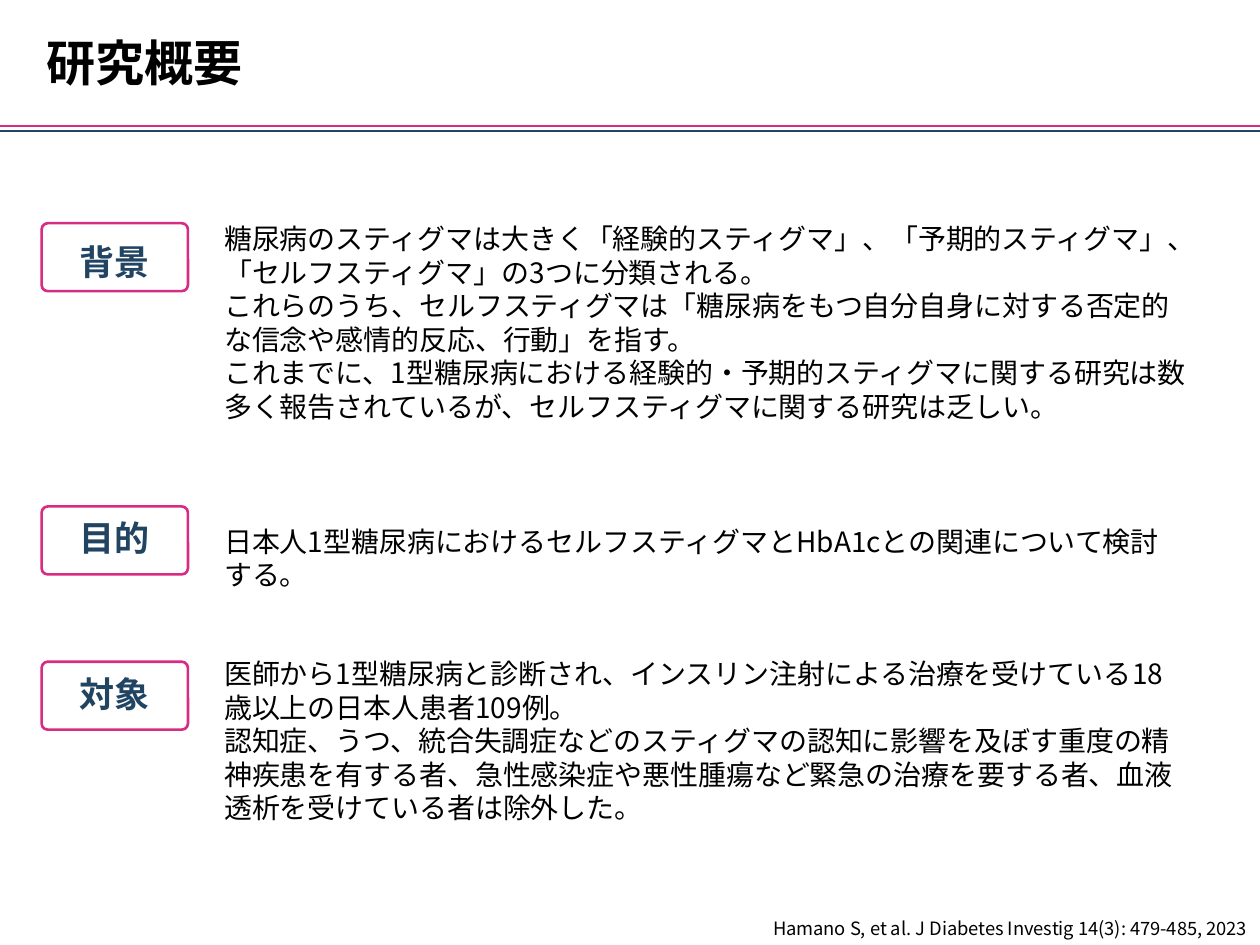
"""Build the study overview slide: title, three labelled sections and a citation."""
from lxml import etree
from pptx import Presentation
from pptx.dml.color import RGBColor
from pptx.enum.lang import MSO_LANGUAGE_ID
from pptx.enum.shapes import MSO_CONNECTOR, MSO_SHAPE
from pptx.enum.text import MSO_ANCHOR, MSO_AUTO_SIZE, PP_ALIGN
from pptx.oxml.ns import qn
from pptx.util import Cm, Pt

JAPANESE = MSO_LANGUAGE_ID.JAPANESE
STRAIGHT, ROUNDED = MSO_CONNECTOR.STRAIGHT, MSO_SHAPE.ROUNDED_RECTANGLE
TOP, MIDDLE, BOTTOM = MSO_ANCHOR.TOP, MSO_ANCHOR.MIDDLE, MSO_ANCHOR.BOTTOM
FIT, FIXED = MSO_AUTO_SIZE.SHAPE_TO_FIT_TEXT, MSO_AUTO_SIZE.NONE
LEFT, CENTER, RIGHT = PP_ALIGN.LEFT, PP_ALIGN.CENTER, PP_ALIGN.RIGHT

TITLE = "研究概要"
CITATION = "Hamano S, et al. J Diabetes Investig 14(3): 479-485, 2023"
SECTIONS = [
    {"label": "背景", "label_top": 4.5, "spacing": 1.2, "body": (4.34, 20.04, 4.37), "text": [
        "糖尿病のスティグマは大きく「経験的スティグマ」、「予期的スティグマ」、「セルフスティグマ」の3つに分類される。",
        "これらのうち、セルフスティグマは「糖尿病をもつ自分自身に対する否定的な信念や感情的反応、行動」を指す。",
        "これまでに、1型糖尿病における経験的・予期的スティグマに関する研究は数多く報告されているが、"
        "セルフスティグマに関する研究は乏しい。"]},
    {"label": "目的", "label_top": 10.21, "spacing": 0.9, "body": (10.44, 19.76, 0.94), "text": [
        "日本人1型糖尿病におけるセルフスティグマとHbA1cとの関連について検討する。"]},
    {"label": "対象", "label_top": 13.34, "spacing": 0.9, "body": (13.11, 19.76, 3.68), "text": [
        "医師から1型糖尿病と診断され、インスリン注射による治療を受けている18歳以上の日本人患者109例。",
        "認知症、うつ、統合失調症などのスティグマの認知に影響を及ぼす重度の精神疾患を有する者、"
        "急性感染症や悪性腫瘍など緊急の治療を要する者、血液透析を受けている者は除外した。"]},
]

FONT = "Noto Sans CJK JP"
COLORS = {"navy": "224463", "pink": "D82B83", "black": "000000"}
SLIDE_W, SLIDE_H = 25.4, 19.05
LABEL_X, LABEL_W, LABEL_H = 0.84, 2.95, 1.37
BODY_X = 4.27
RULES = [(2.64, "navy"), (2.54, "pink")]


def rgb(name):
    return RGBColor.from_string(COLORS[name])


def write(sp, lines, size, color="black", bold=False, align=LEFT, spacing=1.0, **frame):
    tf = sp.text_frame
    for name, value in ({"word_wrap": True, "auto_size": FIXED} | frame).items():
        setattr(tf, name, value)
    for i, line in enumerate(lines):
        p = tf.paragraphs[0] if i == 0 else tf.add_paragraph()
        p.alignment, p.line_spacing = align, spacing
        r = p.add_run()
        r.text = line
        look = {"name": FONT, "size": Pt(size), "bold": bold, "language_id": JAPANESE}
        for name, value in look.items():
            setattr(r.font, name, value)
        r.font.color.rgb = rgb(color)
        r.font._element.find(qn("a:latin")).addnext(
            etree.Element(qn("a:ea"), typeface=FONT))


def add_rule(slide, y, color):
    line = slide.shapes.add_connector(STRAIGHT, 0, Cm(y), Cm(SLIDE_W), Cm(y))
    line.line.color.rgb, line.line.width = rgb(color), Pt(1.5)
    etree.SubElement(line._element.spPr, qn("a:effectLst"))


def add_section(slide, section):
    box = slide.shapes.add_shape(
        ROUNDED, Cm(LABEL_X), Cm(section["label_top"]), Cm(LABEL_W), Cm(LABEL_H))
    box.adjustments[0] = 0.09
    box.shadow.inherit = False
    box.fill.background()
    box.line.color.rgb, box.line.width = rgb("pink"), Pt(1.5)
    write(box, [section["label"]], 20, "navy", True, CENTER, section["spacing"],
          vertical_anchor=MIDDLE)
    top, width, height = section["body"]
    body = slide.shapes.add_textbox(Cm(BODY_X), Cm(top), Cm(width), Cm(height))
    write(body, section["text"], 16, vertical_anchor=TOP, auto_size=FIT)


def main():
    prs = Presentation()
    prs.slide_width, prs.slide_height = Cm(SLIDE_W), Cm(SLIDE_H)
    slide = prs.slides.add_slide(prs.slide_layouts[5])
    for y, color in RULES:
        add_rule(slide, y, color)

    title = slide.shapes.title
    place = {"left": 0.69, "top": 0.53, "width": 4.5, "height": 1.45}
    for name, value in place.items():
        setattr(title, name, Cm(value))
    write(title, [TITLE], 28, bold=True, vertical_anchor=MIDDLE, word_wrap=False)

    for section in SECTIONS:
        add_section(slide, section)

    citation = slide.shapes.add_textbox(Cm(12.42), Cm(18.34), Cm(12.98), Cm(0.71))
    write(citation, [CITATION], 10.5, align=RIGHT, vertical_anchor=BOTTOM)
    prs.save("out.pptx")


if __name__ == "__main__":
    main()
